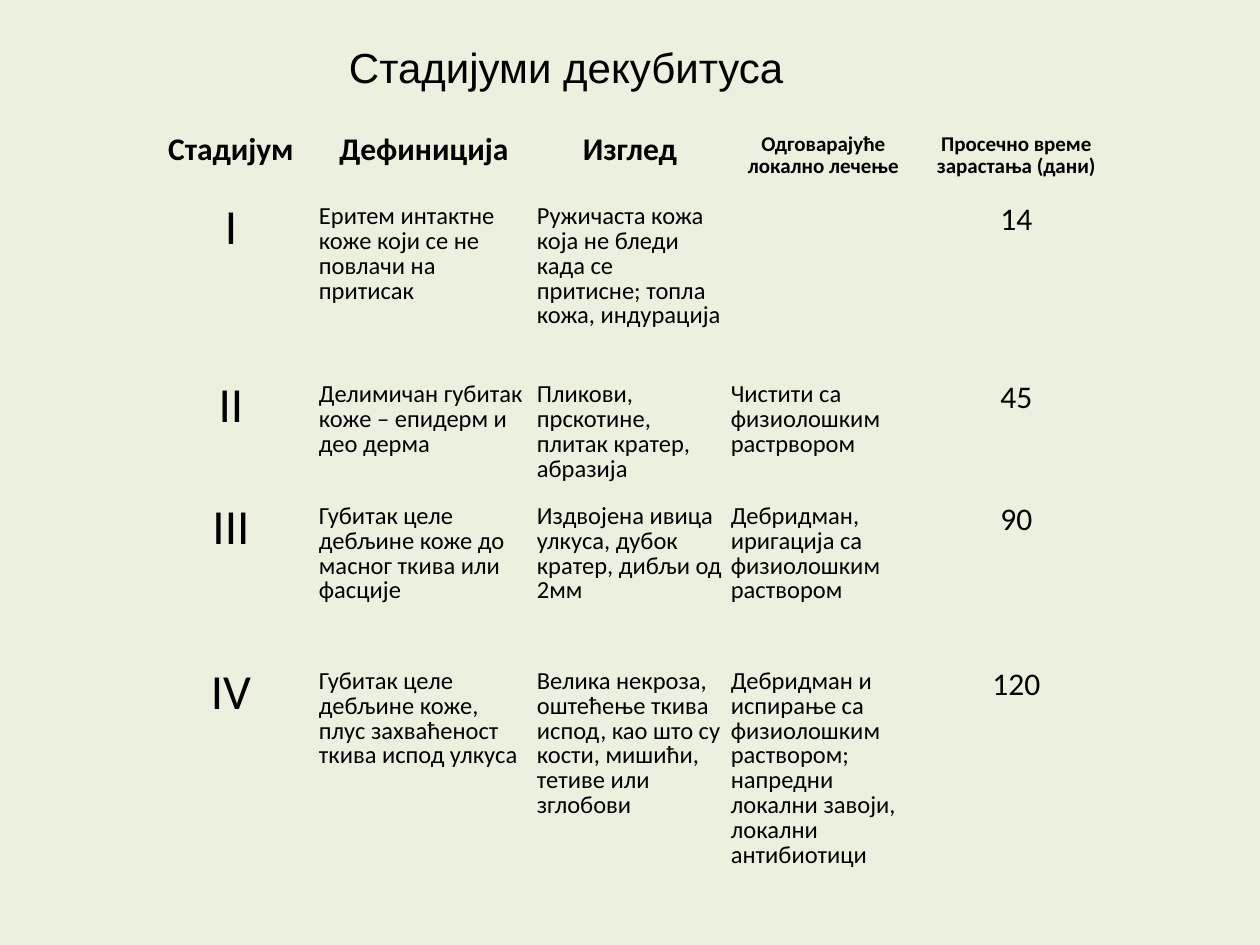
from dataclasses import dataclass

from pptx import Presentation
from pptx.dml.color import RGBColor
from pptx.enum.text import MSO_ANCHOR, MSO_AUTO_SIZE, PP_ALIGN
from pptx.oxml.ns import qn
from pptx.util import Emu, Pt

EMU_PER_PX = 9144000 / 1260
NO_STYLE_NO_GRID = "{2D5ABB26-0587-4C30-8999-92F81FD0307C}"

HEADERS = [
    "Стадијум",
    "Дефиниција",
    "Изглед",
    "Одговарајуће локално лечење",
    "Просечно време зарастања (дани)",
]
STAGES = [
    ["I", "Еритем интактне коже који се не повлачи на притисак",
     "Ружичаста кожа која не бледи када се притисне; топла кожа, индурација",
     "", "14"],
    ["II", "Делимичан губитак коже – епидерм и део дерма",
     "Пликови, прскотине, плитак кратер, абразија",
     "Чистити са физиолошким растрвором", "45"],
    ["III", "Губитак целе дебљине коже до масног ткива или фасције",
     "Издвојена ивица улкуса, дубок кратер, дибљи од 2мм",
     "Дебридман, иригација са физиолошким раствором", "90"],
    ["IV", "Губитак целе дебљине коже, плус захваћеност ткива испод улкуса",
     "Велика некроза, оштећење ткива испод, као што су кости, мишићи, тетиве или зглобови",
     "Дебридман и испирање са физиолошким раствором; напредни локални завоји, локални антибиотици",
     "120"],
]


@dataclass(frozen=True)
class Theme:
    """Colours, fonts and type sizes of the slide."""

    background: RGBColor = RGBColor(0xEB, 0xF1, 0xDE)
    text: RGBColor = RGBColor(0, 0, 0)
    title_font: str = "Arial"
    table_font: str = "Calibri"
    title_size: int = 24
    header_sizes: tuple = (18, 18, 18, 12, 12)
    body_sizes: tuple = (28, 14, 14, 14, 18)
    body_centered: tuple = (True, False, False, False, True)
    line_spacing: float = 0.83


def px(length):
    """Turn pixels into EMU."""
    return Emu(round(length * EMU_PER_PX))


class SlideBuilder:
    """Holds the theme and the current slide, and adds elements to it."""

    def __init__(self, slide, theme):
        """Keep the slide and colour its background."""
        self.slide = slide
        self.theme = theme
        slide.background.fill.solid()
        slide.background.fill.fore_color.rgb = theme.background

    def set_text(self, frame, text, font_name, size, alignment, bold=False):
        """Put one formatted paragraph into a text frame."""
        paragraph = frame.paragraphs[0]
        paragraph.text = text
        paragraph.alignment = alignment
        font = paragraph.font
        font.name, font.size, font.bold = font_name, Pt(size), bold
        font.color.rgb = self.theme.text
        return paragraph

    def title(self, text, left, top, width, height):
        """Move, fill and format the title placeholder."""
        shape = self.slide.shapes.title
        shape.left, shape.top = px(left), px(top)
        shape.width, shape.height = px(width), px(height)
        frame = shape.text_frame
        frame.word_wrap = True
        frame.auto_size = MSO_AUTO_SIZE.NONE
        frame.vertical_anchor = MSO_ANCHOR.TOP
        frame.margin_left = frame.margin_right = px(13)
        frame.margin_top, frame.margin_bottom = px(11), px(0)
        self.set_text(frame, text, self.theme.title_font, self.theme.title_size, PP_ALIGN.LEFT)

    def cell(self, cell, text, size, centered, bold):
        """Fill and format one table cell."""
        cell.fill.background()
        cell.vertical_anchor = MSO_ANCHOR.TOP
        cell.margin_left = cell.margin_right = px(4)
        cell.margin_top, cell.margin_bottom = px(9), px(6)
        alignment = PP_ALIGN.CENTER if centered else PP_ALIGN.LEFT
        paragraph = self.set_text(
            cell.text_frame, text, self.theme.table_font, size, alignment, bold
        )
        paragraph.line_spacing = self.theme.line_spacing

    def table(self, headers, body, left, top, widths, heights):
        """Add a plain table with a bold, centred header row."""
        rows = [headers, *body]
        table = self.slide.shapes.add_table(
            len(rows), len(headers), px(left), px(top), px(sum(widths)), px(sum(heights))
        ).table
        table.first_row = table.horz_banding = False
        for style in table._tbl.iter(qn("a:tableStyleId")):
            style.text = NO_STYLE_NO_GRID
        for column, width in zip(table.columns, widths):
            column.width = px(width)
        for row, height in zip(table.rows, heights):
            row.height = px(height)
        for i, texts in enumerate(rows):
            is_header = i == 0
            sizes = self.theme.header_sizes if is_header else self.theme.body_sizes
            for j, text in enumerate(texts):
                centered = is_header or self.theme.body_centered[j]
                self.cell(table.cell(i, j), text, sizes[j], centered, is_header)


def main():
    """Build and save the presentation."""
    presentation = Presentation()
    presentation.slide_width, presentation.slide_height = px(1260), px(945)
    slide = presentation.slides.add_slide(presentation.slide_layouts.get_by_name("Title Only"))
    builder = SlideBuilder(slide, Theme())
    builder.title("Стадијуми декубитуса", 336, 30, 536, 63)
    builder.table(
        HEADERS, STAGES, 147, 126,
        widths=[168, 218, 194, 193, 193],
        heights=[70, 178, 122, 165, 239],
    )
    presentation.save("out.pptx")


if __name__ == "__main__":
    main()
